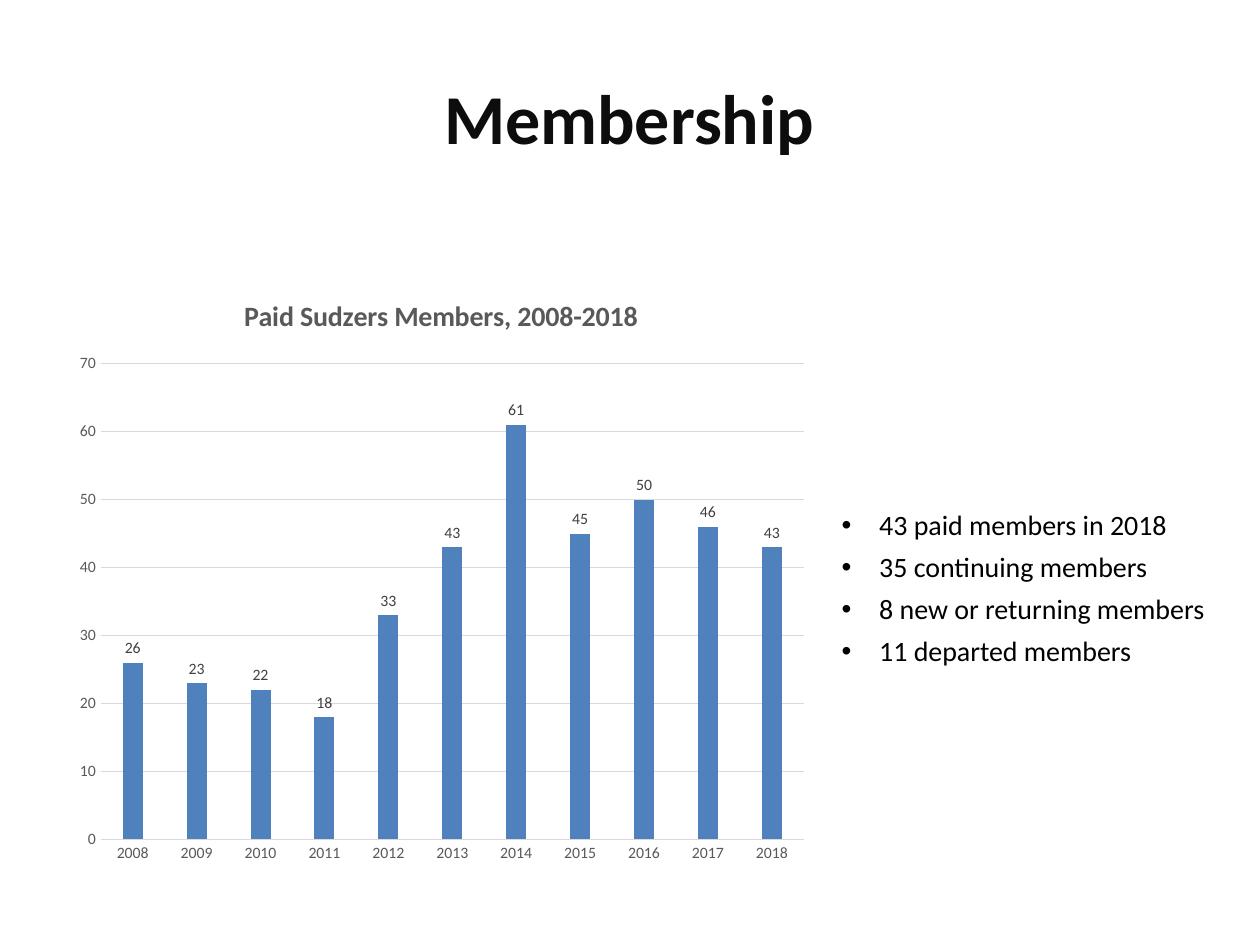
from dataclasses import dataclass

from lxml import etree
from pptx import Presentation
from pptx.chart.data import CategoryChartData
from pptx.dml.color import RGBColor
from pptx.enum.chart import XL_CHART_TYPE, XL_LABEL_POSITION, XL_TICK_MARK
from pptx.enum.text import MSO_ANCHOR, MSO_AUTO_SIZE, PP_ALIGN
from pptx.oxml import parse_xml
from pptx.oxml.ns import nsdecls, qn
from pptx.util import Cm, Pt

COLUMNS = XL_CHART_TYPE.COLUMN_CLUSTERED
OUTSIDE_END = XL_LABEL_POSITION.OUTSIDE_END
NO_TICK = XL_TICK_MARK.NONE
MIDDLE = MSO_ANCHOR.MIDDLE
FIT_SHAPE = MSO_AUTO_SIZE.SHAPE_TO_FIT_TEXT
CENTER = PP_ALIGN.CENTER
LEFT = PP_ALIGN.LEFT

FONT = "Calibri"
BLACK = RGBColor(0x00, 0x00, 0x00)
INK = RGBColor(0x0D, 0x0D, 0x0D)
LABEL_GRAY = RGBColor(0x40, 0x40, 0x40)
AXIS_GRAY = RGBColor(0x59, 0x59, 0x59)
GRID_GRAY = RGBColor(0xD9, 0xD9, 0xD9)
BAR_BLUE = RGBColor(0x4F, 0x81, 0xBD)


@dataclass(frozen=True)
class Frame:
    left: float
    top: float
    width: float
    height: float

    def lengths(self):
        return Cm(self.left), Cm(self.top), Cm(self.width), Cm(self.height)


@dataclass(frozen=True)
class YearCount:
    year: int
    members: int


TITLE_FRAME = Frame(1.27, 0.76, 22.83, 3.18)
LIST_FRAME = Frame(16.71, 10.11, 7.92, 3.53)
CHART_FRAME = Frame(1.27, 5.51, 15.24, 12.14)
MEMBER_COUNTS = [26, 23, 22, 18, 33, 43, 61, 45, 50, 46, 43]
HISTORY = [YearCount(year, count) for year, count in enumerate(MEMBER_COUNTS, 2008)]
FACTS = [
    "43 paid members in 2018",
    "35 continuing members",
    "8 new or returning members",
    "11 departed members",
]


def style_font(font, *, size: float, color: RGBColor, bold: bool = False) -> None:
    font.name = FONT
    font.size = Pt(size)
    font.bold = bold
    font.color.rgb = color


def place(shape, frame: Frame) -> None:
    shape.left, shape.top, shape.width, shape.height = frame.lengths()


def write_text(paragraph, text: str, *, size: float, color: RGBColor,
               bold: bool = False, align=LEFT):
    paragraph.alignment = align
    span = paragraph.add_run()
    span.text = text
    style_font(span.font, size=size, color=color, bold=bold)
    return span


def outline_text(span, color: RGBColor, width: float) -> None:
    line = parse_xml(
        f'<a:ln {nsdecls("a")} w="{Pt(width)}"><a:solidFill>'
        f'<a:srgbClr val="{color}"/></a:solidFill></a:ln>'
    )
    span.font._element.insert(0, line)


def add_bullet(paragraph) -> None:
    properties = paragraph._p.get_or_add_pPr()
    properties.set("marL", str(Cm(0.76)))
    properties.set("indent", str(-Cm(0.76)))
    etree.SubElement(properties, qn("a:buFont")).set("typeface", "Arial")
    etree.SubElement(properties, qn("a:buChar")).set("char", "•")


def fill_title(box) -> None:
    place(box, TITLE_FRAME)
    box.text_frame.vertical_anchor = MIDDLE
    span = write_text(box.text_frame.paragraphs[0], "Membership",
                      size=40, color=INK, bold=True, align=CENTER)
    outline_text(span, INK, 1.5)


def fill_list(box, facts: list[str]) -> None:
    place(box, LIST_FRAME)
    frame = box.text_frame
    frame.word_wrap = False
    frame.auto_size = FIT_SHAPE
    for index, fact in enumerate(facts):
        paragraph = frame.add_paragraph() if index else frame.paragraphs[0]
        add_bullet(paragraph)
        paragraph.space_before = Pt(4.8 if index else 0)
        write_text(paragraph, fact, size=16, color=BLACK)


def fix_plot_area(chart, **fractions: float) -> None:
    area = chart._chartSpace.chart.plotArea
    for old in area.findall(qn("c:layout")):
        area.remove(old)
    settings = {"layoutTarget": "inner", "xMode": "edge", "yMode": "edge", **fractions}
    entries = "".join(f'<c:{name} val="{value}"/>' for name, value in settings.items())
    area.insert(0, parse_xml(
        f'<c:layout {nsdecls("c")}><c:manualLayout>{entries}</c:manualLayout></c:layout>'
    ))


def style_line(line, color: RGBColor) -> None:
    line.color.rgb = color
    line.width = Pt(0.75)


def style_axes(chart) -> None:
    for axis in (chart.category_axis, chart.value_axis):
        axis.major_tick_mark = NO_TICK
        axis.minor_tick_mark = NO_TICK
        style_font(axis.tick_labels.font, size=9, color=AXIS_GRAY)
    style_line(chart.category_axis.format.line, GRID_GRAY)
    values = chart.value_axis
    values.minimum_scale, values.maximum_scale, values.major_unit = 0, 70, 10
    values.format.line.fill.background()
    values.has_major_gridlines = True
    style_line(values.major_gridlines.format.line, GRID_GRAY)


def style_bars(plot) -> None:
    plot.gap_width = 219
    plot.overlap = -27
    plot.vary_by_categories = False
    fill = plot.series[0].format.fill
    fill.solid()
    fill.fore_color.rgb = BAR_BLUE
    labels = plot.series[0].data_labels
    labels.show_value = True
    labels.position = OUTSIDE_END
    style_font(labels.font, size=9, color=LABEL_GRAY)


def add_member_chart(page, history: list[YearCount]) -> None:
    data = CategoryChartData()
    data.categories = [str(entry.year) for entry in history]
    data.add_series("Series 1", [entry.members for entry in history])
    chart = page.shapes.add_chart(COLUMNS, *CHART_FRAME.lengths(), data).chart
    style_font(chart.font, size=10, color=BLACK)
    chart.has_legend = False
    chart.has_title = True
    chart.chart_title.include_in_layout = False
    write_text(chart.chart_title.text_frame.paragraphs[0],
               "Paid Sudzers Members, 2008-2018",
               size=16, color=AXIS_GRAY, bold=True, align=CENTER)
    fix_plot_area(chart, x=0.05, y=0.15, w=0.93, h=0.79)
    style_axes(chart)
    style_bars(chart.plots[0])


def main() -> None:
    deck = Presentation()
    deck.slide_width, deck.slide_height = Cm(25.4), Cm(19.05)
    page = deck.slides.add_slide(deck.slide_layouts[1])
    fill_title(page.shapes.title)
    fill_list(page.placeholders[1], FACTS)
    add_member_chart(page, HISTORY)
    deck.save("out.pptx")


if __name__ == "__main__":
    main()
